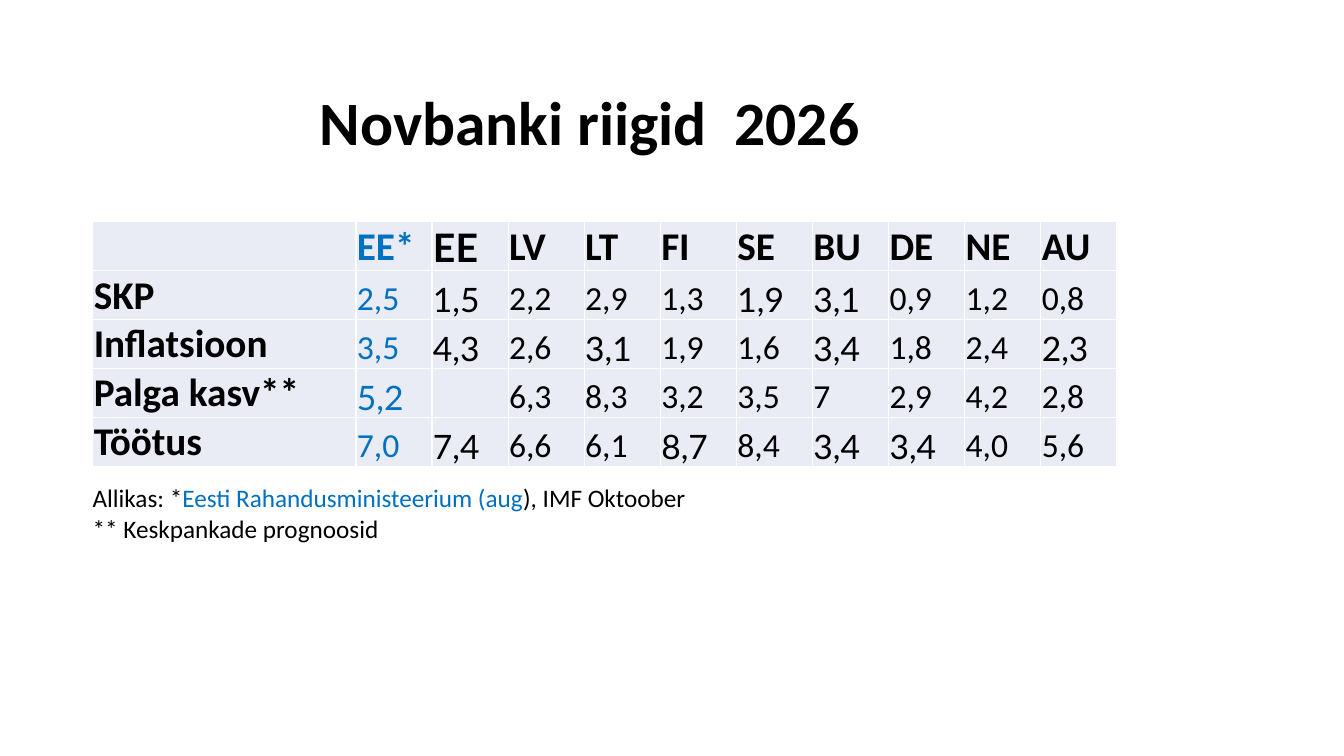
import dataclasses

import lxml.etree
import pptx
import pptx.dml.color
import pptx.enum.text
import pptx.oxml.ns
import pptx.util

Inches = pptx.util.Inches


@dataclasses.dataclass(frozen=True)
class Theme:
    text: str = "000000"
    accent: str = "0070C0"
    cell: str = "E9EBF5"
    border: str = "FFFFFF"
    font: str = "Calibri"
    alternate_font: str = "Lato"
    title_size: int = 44
    label_size: int = 28
    value_size: int = 24
    note_size: int = 18


THEME = Theme()

COUNTRIES = ["", "EE*", "EE", "LV", "LT", "FI", "SE", "BU", "DE", "NE", "AU"]
INDICATORS = [
    ["SKP", "2,5", "1,5", "2,2", "2,9", "1,3", "1,9", "3,1", "0,9", "1,2", "0,8"],
    ["Inflatsioon", "3,5", "4,3", "2,6", "3,1", "1,9", "1,6", "3,4", "1,8", "2,4", "2,3"],
    ["Palga kasv**", "5,2", "", "6,3", "8,3", "3,2", "3,5", "7", "2,9", "4,2", "2,8"],
    ["Töötus", "7,0", "7,4", "6,6", "6,1", "8,7", "8,4", "3,4", "3,4", "4,0", "5,6"],
]
ALTERNATE_FONT_COLUMNS = [{2}, {2, 6, 7}, {2, 4, 7, 10}, {1}, {2, 5, 7, 8}]
MINISTRY_COLUMN = 1


def add_span(para, text, *, size, color=THEME.text, font=THEME.font, bold=False):
    span = para.add_run()
    span.text = text
    span.font.size = pptx.util.Pt(size)
    span.font.name = font
    span.font.bold = bold
    span.font.color.rgb = pptx.dml.color.RGBColor.from_string(color)


class SlideBuilder:
    def __init__(self, deck, theme):
        self.theme = theme
        self.slide = deck.slides.add_slide(deck.slide_layouts.get_by_name("Title Only"))

    def title(self, text, left, top, width, height):
        box = self.slide.shapes.title
        box.left, box.top, box.width, box.height = map(Inches, (left, top, width, height))
        frame = box.text_frame
        frame.auto_size = pptx.enum.text.MSO_AUTO_SIZE.NONE
        frame.vertical_anchor = pptx.enum.text.MSO_ANCHOR.MIDDLE
        para = frame.paragraphs[0]
        para.alignment = pptx.enum.text.PP_ALIGN.LEFT
        para.line_spacing = 0.9
        add_span(para, text, size=self.theme.title_size, bold=True)

    def table(self, rows, left, top, width, row_height, label_width):
        row_count, column_count = len(rows), len(rows[0])
        frame = self.slide.shapes.add_table(
            row_count, column_count, Inches(left), Inches(top),
            Inches(width), Inches(row_height * row_count))
        table = frame.table
        table.first_row = False
        table.horz_banding = False
        value_width = (width - label_width) / (column_count - 1)
        for index, column in enumerate(table.columns):
            column.width = Inches(value_width if index else label_width)
        for row_index, values in enumerate(rows):
            table.rows[row_index].height = Inches(row_height)
            for column_index, value in enumerate(values):
                self.cell(table.cell(row_index, column_index), value, row_index, column_index)

    def cell(self, cell, value, row, column):
        self.borders(cell)
        cell.fill.solid()
        cell.fill.fore_color.rgb = pptx.dml.color.RGBColor.from_string(self.theme.cell)
        if not value:
            return
        cell.vertical_anchor = pptx.enum.text.MSO_ANCHOR.BOTTOM
        cell.margin_left = cell.margin_right = cell.margin_top = Inches(0.01)
        cell.margin_bottom = 0
        is_label = row == 0 or column == 0
        alternate = column in ALTERNATE_FONT_COLUMNS[row]
        add_span(
            cell.text_frame.paragraphs[0], value,
            size=self.theme.label_size if is_label else self.theme.value_size,
            color=self.theme.accent if column == MINISTRY_COLUMN else self.theme.text,
            font=self.theme.alternate_font if alternate else self.theme.font,
            bold=is_label)

    def borders(self, cell):
        qn = pptx.oxml.ns.qn
        properties = cell._tc.get_or_add_tcPr()
        for side in ("lnL", "lnR", "lnT", "lnB"):
            line = lxml.etree.SubElement(properties, qn(f"a:{side}"), w=str(pptx.util.Pt(1)))
            fill = lxml.etree.SubElement(line, qn("a:solidFill"))
            lxml.etree.SubElement(fill, qn("a:srgbClr"), val=self.theme.border)

    def note(self, lines, left, top, width, height):
        box = self.slide.shapes.add_textbox(*map(Inches, (left, top, width, height)))
        frame = box.text_frame
        frame.word_wrap = False
        frame.auto_size = pptx.enum.text.MSO_AUTO_SIZE.SHAPE_TO_FIT_TEXT
        for index, spans in enumerate(lines):
            para = frame.add_paragraph() if index else frame.paragraphs[0]
            for text, color in spans:
                add_span(para, text, size=self.theme.note_size, color=color)


def main():
    deck = pptx.Presentation()
    deck.slide_width = Inches(13.33)
    deck.slide_height = Inches(7.5)
    page = SlideBuilder(deck, THEME)
    page.title("Novbanki riigid  2026", 3.07, 0.52, 11.5, 1.45)
    page.table([COUNTRIES, *INDICATORS], left=0.92, top=2.2, width=10.16,
               row_height=0.48, label_width=2.61)
    page.note([
        [("Allikas: *", THEME.text),
         ("Eesti Rahandusministeerium (aug", THEME.accent),
         ("), IMF Oktoober", THEME.text)],
        [("** Keskpankade prognoosid", THEME.text)],
    ], 0.82, 4.74, 6.14, 0.71)
    deck.save("out.pptx")


if __name__ == "__main__":
    main()
